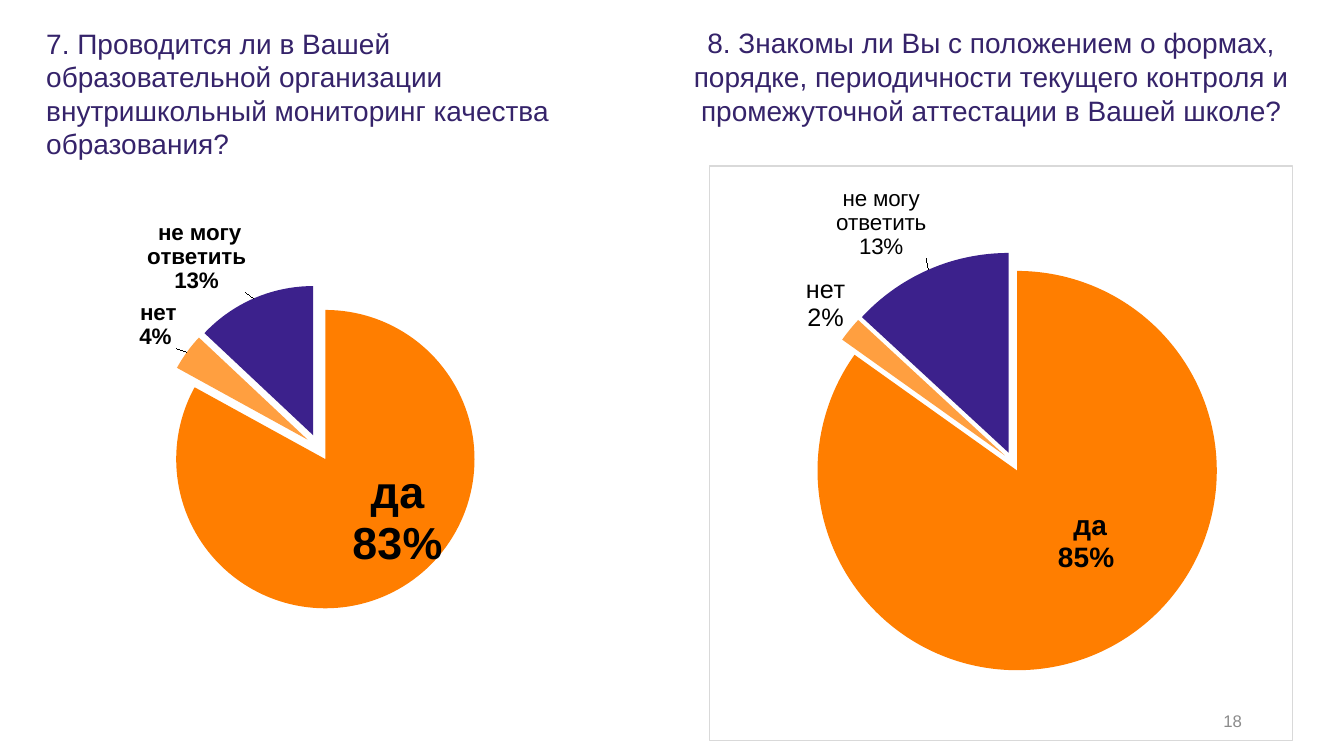
"""Build a slide with two survey questions, each answered by a pie chart."""
from lxml.etree import SubElement
from pptx import Presentation
from pptx.chart.data import CategoryChartData
from pptx.dml.color import RGBColor
from pptx.enum.chart import XL_CHART_TYPE, XL_LABEL_POSITION
from pptx.enum.text import MSO_ANCHOR, MSO_AUTO_SIZE, PP_ALIGN
from pptx.oxml import parse_xml
from pptx.oxml.ns import nsdecls, qn
from pptx.util import Cm, Pt

FONT = "Arial"
COLORS = {
    "heading": "35236A", "number": "8B8B8B", "label": "000000", "border": "D9D9D9",
    "yes": "FF7E00", "no": "FF9F40", "unsure": "3C218C",
}
SLICE_COLORS = ("yes", "no", "unsure")

QUESTION_7 = "7. Проводится ли в Вашей образовательной организации внутришкольный мониторинг качества образования?"
QUESTION_8 = ("8. Знакомы ли Вы с положением о формах, порядке, периодичности текущего контроля "
              "и промежуточной аттестации в Вашей школе?")
PAGE_NUMBER = "18"

PIES = [
    {
        "box": (0.91, 5.05, 14.38, 12.98),
        "plot": (0.21, 0.16, 0.57, 0.64),
        "explosion": 9,
        "border": False,
        "answers": [("да", 83), (" нет", 4), (" не могу ответить", 13)],
        "labels": [(32, True, 0.06, -0.01), (16, True, -0.01, 0), (16, True, -0.01, 0)],
    },
    {
        "box": (17.86, 4.17, 14.73, 14.5),
        "plot": (0.16, 0.15, 0.72, 0.73),
        "explosion": 5,
        "border": True,
        "answers": [(" да", 84), ("нет", 2), ("не могу ответить", 13)],
        "labels": [(20, True, 0.04, -0.03), (18, False, 0, 0.01), (16, False, 0, -0.01)],
    },
]


def place(shape, box):
    shape.left, shape.top, shape.width, shape.height = (Cm(length) for length in box)


def write(shape, text, size, color, alignment, anchor=MSO_ANCHOR.TOP):
    frame = shape.text_frame
    frame.word_wrap = True
    frame.auto_size = MSO_AUTO_SIZE.NONE
    frame.vertical_anchor = anchor
    paragraph = frame.paragraphs[0]
    paragraph.alignment = alignment
    run = paragraph.add_run()
    run.text = text
    style(run.font, size, color)


def style(font, size, color, bold=False):
    font.name, font.size, font.bold = FONT, Pt(size), bold
    font.color.rgb = RGBColor.from_string(COLORS[color])


def manual_layout(**values):
    items = "".join(f'<c:{name} val="{value}"/>' for name, value in values.items())
    return parse_xml(f'<c:layout {nsdecls("c")}><c:manualLayout>{items}</c:manualLayout></c:layout>')


def set_plot_layout(chart, plot):
    plot_area = chart._chartSpace.xpath("c:chart/c:plotArea")[0]
    for layout in plot_area.findall(qn("c:layout")):
        plot_area.remove(layout)
    x, y, w, h = plot
    plot_area.insert(0, manual_layout(layoutTarget="inner", xMode="edge", yMode="edge", x=x, y=y, w=w, h=h))


def set_border(chart, visible):
    line = f'<a:solidFill><a:srgbClr val="{COLORS["border"]}"/></a:solidFill>' if visible else "<a:noFill/>"
    chart._chartSpace.xpath("c:chart")[0].addnext(parse_xml(
        f'<c:spPr {nsdecls("c", "a")}><a:noFill/><a:ln w="9525">{line}</a:ln></c:spPr>'))


def format_labels(series, labels):
    for index, (size, bold, _, _) in enumerate(labels):
        label = series.points[index].data_label
        style(label.font, size, "label", bold)
        label.position = XL_LABEL_POSITION.OUTSIDE_END if index else XL_LABEL_POSITION.CENTER
    for element, (_, _, x, y) in zip(series._element.xpath("c:dLbls/c:dLbl"), labels):
        element.find(qn("c:idx")).addnext(manual_layout(x=x, y=y))
        for name, value in (("showVal", "0"), ("showCatName", "1"), ("showPercent", "1")):
            element.find(qn(f"c:{name}")).set("val", value)
        SubElement(element, qn("c:separator")).text = "\n"


def add_pie(slide, pie):
    data = CategoryChartData()
    data.categories = [name for name, _ in pie["answers"]]
    data.add_series("Series 1", [value for _, value in pie["answers"]])
    box = (Cm(length) for length in pie["box"])
    chart = slide.shapes.add_chart(XL_CHART_TYPE.PIE, *box, data).chart
    chart.has_legend = chart.has_title = False
    style(chart.font, 10, "label")
    chart.plots[0].vary_by_categories = True
    series = chart.plots[0].series[0]
    for index, color in enumerate(SLICE_COLORS):
        fill = series.points[index].format.fill
        fill.solid()
        fill.fore_color.rgb = RGBColor.from_string(COLORS[color])
    format_labels(series, pie["labels"])
    series._element.xpath("c:tx")[0].addnext(
        parse_xml(f'<c:explosion {nsdecls("c")} val="{pie["explosion"]}"/>'))
    set_plot_layout(chart, pie["plot"])
    set_border(chart, pie["border"])


def main():
    presentation = Presentation()
    presentation.slide_width, presentation.slide_height = Cm(33.87), Cm(19.05)
    slide = presentation.slides.add_slide(presentation.slide_layouts[5])
    title = slide.shapes.title
    place(title, (0.91, 0.53, 13.23, 3.63))
    write(title, QUESTION_7, 20, "heading", PP_ALIGN.LEFT)
    for pie in PIES:
        add_pie(slide, pie)
    question = slide.shapes.add_textbox(Cm(16.51), Cm(0.53), Cm(16.94), Cm(2.79))
    write(question, QUESTION_8, 20, "heading", PP_ALIGN.CENTER)
    number = slide.shapes.add_textbox(Cm(23.93), Cm(17.65), Cm(7.62), Cm(1.02))
    write(number, PAGE_NUMBER, 12, "number", PP_ALIGN.RIGHT, MSO_ANCHOR.MIDDLE)
    presentation.save("out.pptx")


if __name__ == "__main__":
    main()
